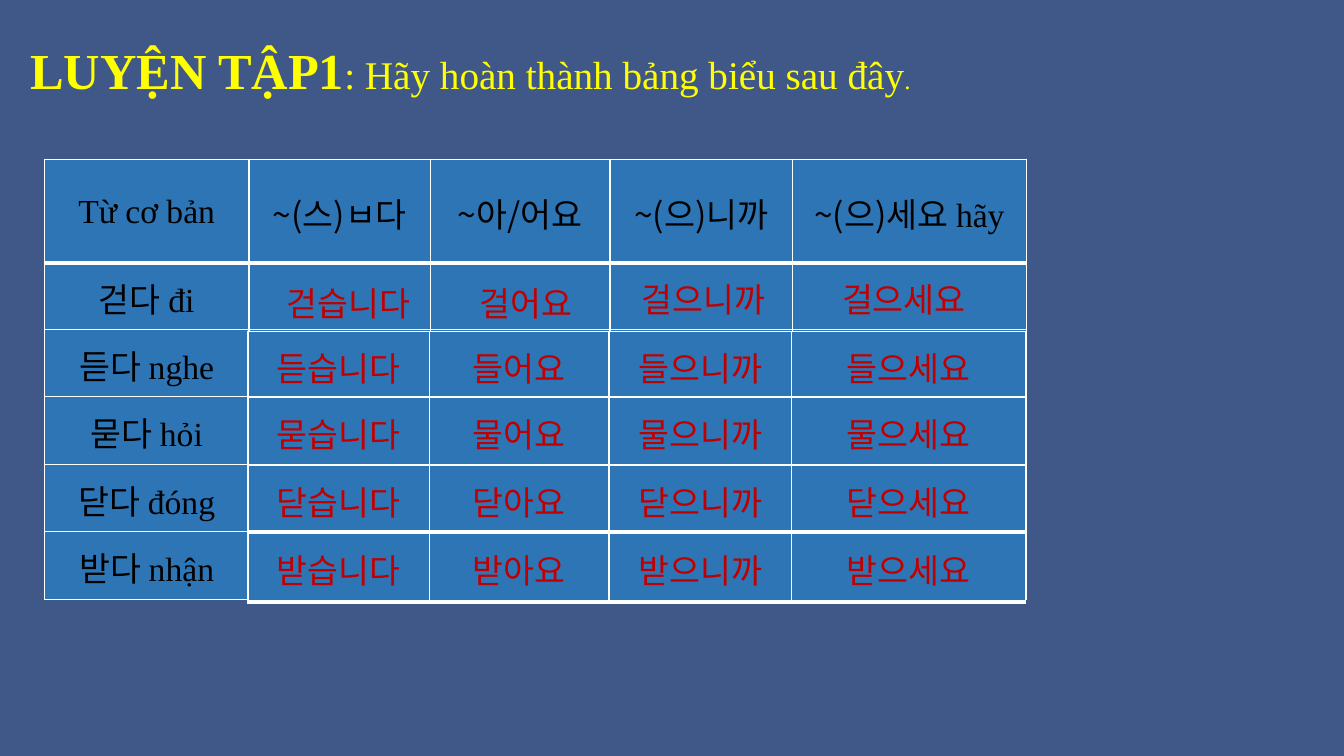
from lxml import etree
from pptx import Presentation
from pptx.dml.color import RGBColor
from pptx.enum.text import MSO_ANCHOR, MSO_AUTO_SIZE, PP_ALIGN
from pptx.oxml.ns import qn
from pptx.util import Inches, Pt

CENTER, JUSTIFY = PP_ALIGN.CENTER, PP_ALIGN.JUSTIFY
MIDDLE = MSO_ANCHOR.MIDDLE
GROW = MSO_AUTO_SIZE.SHAPE_TO_FIT_TEXT
NAVY = RGBColor(0x40, 0x58, 0x88)
BLUE = RGBColor(0x2E, 0x75, 0xB6)
WHITE = RGBColor(0xFF, 0xFF, 0xFF)
YELLOW = RGBColor(0xFF, 0xFF, 0x00)
RED = RGBColor(0xC0, 0x00, 0x00)
BLACK = RGBColor(0x00, 0x00, 0x00)
SERIF, KOREAN = "Times New Roman", "Noto Sans CJK KR"

COLUMNS = [2.03, 1.8, 1.78, 1.81, 2.32]
ROWS = [1.03, 0.66, 0.66, 0.68, 0.66, 0.68]
TABLE_LEFT, TABLE_TOP = 0.44, 1.58
ANSWER_LEFT = 2.46


def write(frame, runs, color=BLACK, align=CENTER, after=0):
    """Fill a text frame with runs of (text, font, size, bold)."""
    para = frame.paragraphs[0]
    para.alignment = align
    para.line_spacing = 1.07
    para.space_after = Pt(after)
    for text, font, size, bold in runs:
        span = para.add_run()
        span.text = text
        span.font.name = font
        span.font.size = Pt(size)
        span.font.bold = bold
        span.font.color.rgb = color
        east_asian = etree.SubElement(span.font._element, qn("a:ea"))
        east_asian.set("typeface", font)


def add_grid(page, left, top, columns, rows, content, color, thick_rows):
    """Draw a blue table; the rows in thick_rows get a heavy lower edge."""
    grid = page.shapes.add_table(len(rows), len(columns), Inches(left), Inches(top),
                                 Inches(sum(columns)), Inches(sum(rows))).table
    grid.first_row = grid.horz_banding = False
    for column, width in zip(grid.columns, columns):
        column.width = Inches(width)
    for r, height in enumerate(rows):
        grid.rows[r].height = Inches(height)
        for c in range(len(columns)):
            cell = grid.cell(r, c)
            cell.margin_left = cell.margin_right = Inches(0.07)
            cell.margin_top = cell.margin_bottom = 0
            cell.vertical_anchor = MIDDLE
            for side in "LRTB":
                weight = 3 if side == "B" and r in thick_rows else 1
                edge = etree.SubElement(cell._tc.get_or_add_tcPr(), qn("a:ln" + side),
                                        w=str(Pt(weight)))
                paint = etree.SubElement(edge, qn("a:solidFill"))
                etree.SubElement(paint, qn("a:srgbClr"), val=str(WHITE))
            cell.fill.solid()
            cell.fill.fore_color.rgb = BLUE
            if c < len(content[r]):
                write(cell.text_frame,
                      [(text, font, 24, False) for text, font in content[r][c]], color)


deck = Presentation()
deck.slide_width, deck.slide_height = Inches(13.33), Inches(7.5)
page = deck.slides.add_slide(deck.slide_layouts[6])
page.background.fill.solid()
page.background.fill.fore_color.rgb = NAVY

# Title
title = page.shapes.add_textbox(Inches(0.2), Inches(0.3), Inches(9.02), Inches(0.71))
title.text_frame.word_wrap = False
title.text_frame.auto_size = GROW
write(title.text_frame, [("LUYỆN TẬP1", SERIF, 36, True),
                         (": Hãy hoàn thành bảng biểu sau đây", SERIF, 28, False),
                         (".", SERIF, 18, False)], YELLOW, JUSTIFY, after=8)

# Exercise table: endings across, verbs down
header = [[("Từ cơ bản", SERIF)], [("~(스)ㅂ다", KOREAN)], [("~아/어요", KOREAN)],
          [("~(으)니까", KOREAN)], [("~(으)세요 ", KOREAN), ("hãy", SERIF)]]
verbs = [("걷다 ", "đi"), ("듣다 ", "nghe"), ("묻다 ", "hỏi"),
         ("닫다 ", "đóng"), ("받다 ", "nhận")]
verb_rows = [[[(verb, KOREAN), (meaning, SERIF)]] for verb, meaning in verbs]
add_grid(page, TABLE_LEFT, TABLE_TOP, COLUMNS, ROWS, [header] + verb_rows, BLACK, {0})

# Answers for the first verb, as loose labels
for word, left, top, width in [("걷습니다", 2.68, 2.73, 1.55), ("걸어요", 4.61, 2.73, 1.21),
                               ("걸으니까", 6.2, 2.69, 1.55), ("걸으세요", 8.19, 2.69, 1.55)]:
    box = page.shapes.add_textbox(Inches(left), Inches(top), Inches(width), Inches(0.48))
    box.text_frame.word_wrap = False
    box.text_frame.auto_size = GROW
    write(box.text_frame, [(word, KOREAN, 24, False)], RED)

# Answers for the other verbs, one strip per row
answers = [(3.29, ["듣습니다", "들어요", "들으니까", "들으세요"]),
           (3.94, ["묻습니다", "물어요", "물으니까", "물으세요"]),
           (4.62, ["닫습니다", "닫아요", "닫으니까", "닫으세요"]),
           (5.29, ["받습니다", "받아요", "받으니까", "받으세요"])]
for (top, words), height in zip(answers, ROWS[2:]):
    add_grid(page, ANSWER_LEFT, top, COLUMNS[1:], [height],
             [[[(word, KOREAN)] for word in words]], RED, {0})

deck.save("out.pptx")
